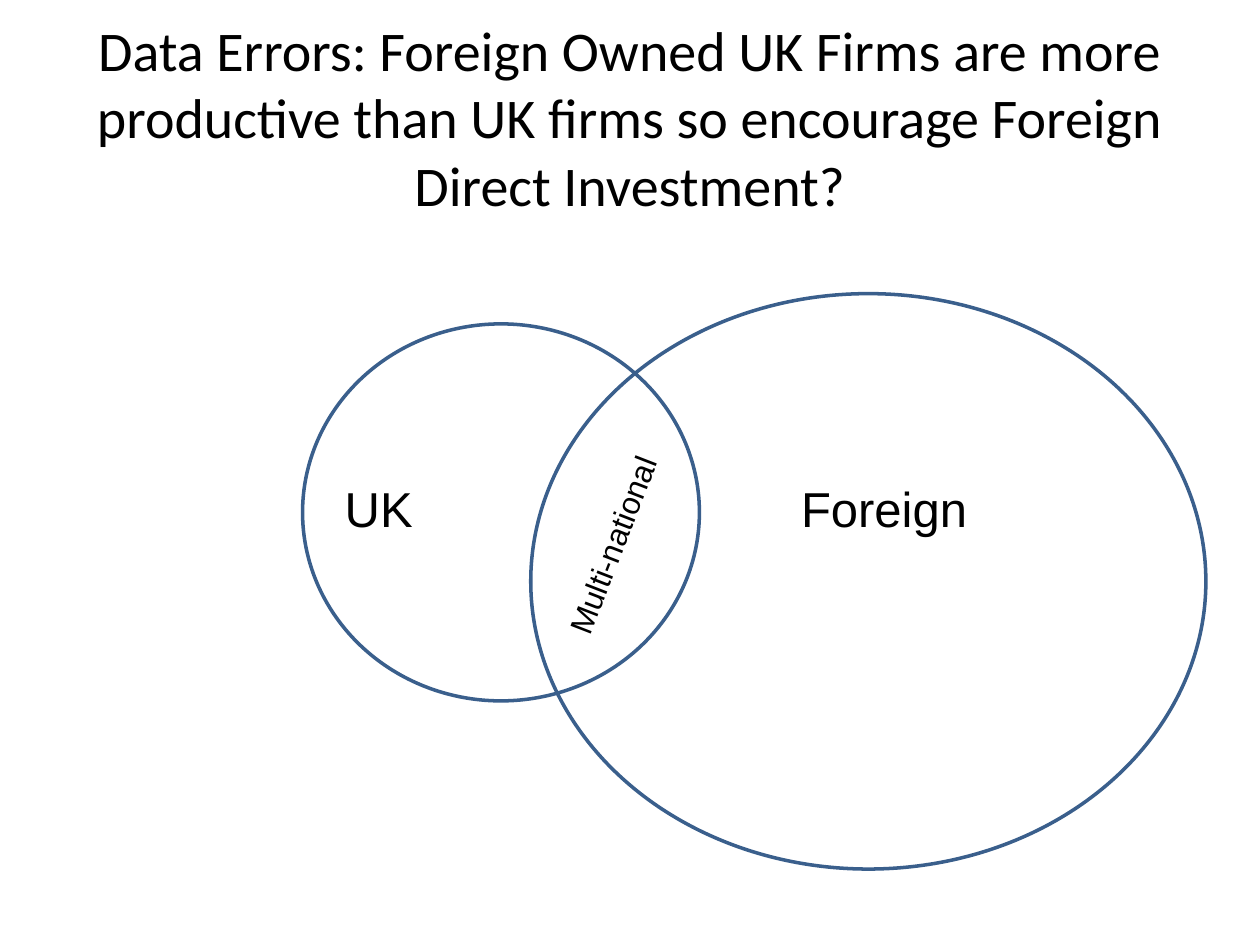
from pptx import Presentation
from pptx.dml.color import RGBColor
from pptx.enum.shapes import MSO_SHAPE
from pptx.enum.text import MSO_ANCHOR, PP_ALIGN
from pptx.util import Cm, Pt

BLACK = RGBColor(0x00, 0x00, 0x00)
BLUE = RGBColor(0x3A, 0x5F, 0x8C)


def write(tf, text, size=28, font="Arial", align=PP_ALIGN.LEFT, anchor=MSO_ANCHOR.TOP, wrap=True):
    tf.word_wrap = wrap
    tf.vertical_anchor = anchor
    p = tf.paragraphs[0]
    p.alignment = align
    r = p.add_run()
    r.text = text
    r.font.size = Pt(size)
    r.font.name = font
    r.font.color.rgb = BLACK


prs = Presentation()
prs.slide_width, prs.slide_height = Cm(25.4), Cm(19.05)
s = prs.slides.add_slide(prs.slide_layouts[5])

title = s.shapes.title
title.left, title.top, title.width, title.height = Cm(1.27), Cm(0.76), Cm(22.86), Cm(3.18)
write(title.text_frame,
      "Data Errors: Foreign Owned UK Firms are more productive than UK firms "
      "so encourage Foreign Direct Investment?",
      size=32, font="Calibri", align=PP_ALIGN.CENTER, anchor=MSO_ANCHOR.MIDDLE)

circles = [(6.1, 6.53, 8, 7.6), (10.7, 5.92, 13.61, 11.6)]
for box in circles:
    sp = s.shapes.add_shape(MSO_SHAPE.OVAL, *map(Cm, box))
    sp.shadow.inherit = False
    sp.fill.background()
    sp.line.color.rgb = BLUE
    sp.line.width = Pt(2)

labels = [
    ("UK", (6.7, 9.53, 1.9, 1.45), 28, 0, False),
    ("Foreign", (15.9, 9.53, 4.2, 1.45), 28, 0, True),
    ("Multi-national", (10.19, 10.46, 4.32, 1.02), 18, 291.2, False),
]
for text, box, size, rotation, wrap in labels:
    sp = s.shapes.add_textbox(*map(Cm, box))
    sp.rotation = rotation
    write(sp.text_frame, text, size=size, wrap=wrap)

prs.save("out.pptx")
